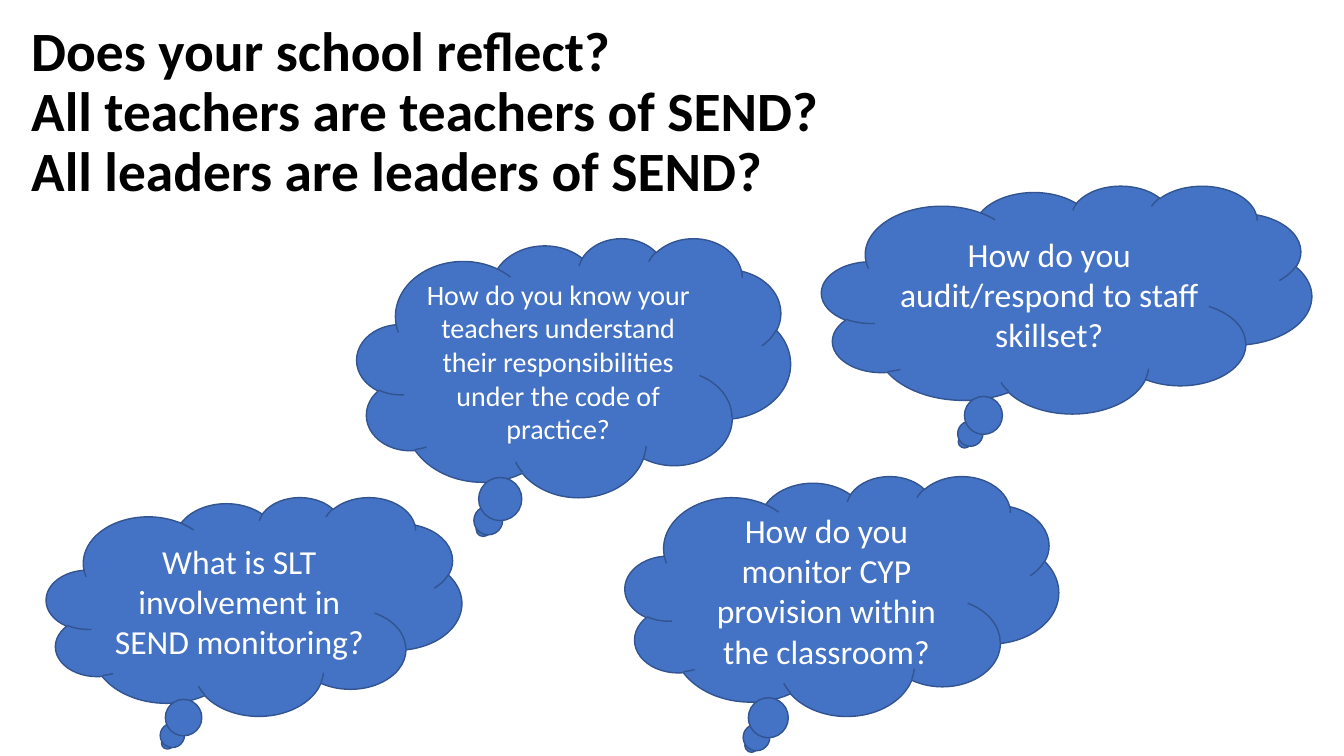
from dataclasses import dataclass

from pptx import Presentation
from pptx.dml.color import RGBColor
from pptx.enum.shapes import MSO_SHAPE
from pptx.enum.text import MSO_ANCHOR, MSO_AUTO_SIZE, PP_ALIGN
from pptx.slide import Slide
from pptx.text.text import TextFrame
from pptx.util import Inches, Pt

CLOUD = MSO_SHAPE.CLOUD_CALLOUT
MIDDLE = MSO_ANCHOR.MIDDLE
NO_FIT = MSO_AUTO_SIZE.NONE
LEFT = PP_ALIGN.LEFT
CENTER = PP_ALIGN.CENTER

BLACK = RGBColor(0x00, 0x00, 0x00)
WHITE = RGBColor(0xFF, 0xFF, 0xFF)
BLUE = RGBColor(0x44, 0x72, 0xC4)
NAVY = RGBColor(0x32, 0x54, 0x91)
FONT = "Calibri"
TITLE_ONLY = 5

TITLE = (
    "Does your school reflect?\n"
    "All teachers are teachers of SEND?\n"
    "All leaders are leaders of SEND?"
)


@dataclass(frozen=True)
class Cloud:
    text: str
    left: float
    top: float
    width: float
    height: float
    size: float = 24


CLOUDS = [
    Cloud(
        "How do you know your teachers understand their responsibilities "
        "under the code of practice?",
        3.54, 2.36, 4.3, 2.57, size=20,
    ),
    Cloud("How do you audit/respond to staff skillset?", 8.15, 1.84, 4.86, 2.26),
    Cloud(
        "How do you monitor CYP provision within the classroom?",
        6.2, 4.72, 4.3, 2.38,
    ),
    Cloud("What is SLT involvement in SEND monitoring?", 0.46, 4.93, 4.12, 2.17),
]


def write(
    frame: TextFrame,
    text: str,
    *,
    size: float,
    color: RGBColor,
    align: PP_ALIGN,
    bold: bool = False,
    spacing: float = 1.0,
) -> None:
    frame.word_wrap = True
    frame.auto_size = NO_FIT
    frame.vertical_anchor = MIDDLE
    para = frame.paragraphs[0]
    para.text = text
    para.alignment = align
    para.line_spacing = spacing
    para.space_before = Pt(0)
    for run in para.runs:
        run.font.name = FONT
        run.font.size = Pt(size)
        run.font.bold = bold
        run.font.color.rgb = color


def add_title(slide: Slide) -> None:
    title = slide.shapes.title
    title.left, title.top = Inches(0.21), Inches(0.4)
    title.width, title.height = Inches(12.2), Inches(1.45)
    write(
        title.text_frame, TITLE,
        size=39.6, color=BLACK, align=LEFT, bold=True, spacing=0.9,
    )


def add_cloud(slide: Slide, cloud: Cloud) -> None:
    shape = slide.shapes.add_shape(
        CLOUD,
        Inches(cloud.left), Inches(cloud.top),
        Inches(cloud.width), Inches(cloud.height),
    )
    shape.shadow.inherit = False
    shape.fill.solid()
    shape.fill.fore_color.rgb = BLUE
    shape.line.color.rgb = NAVY
    shape.line.width = Pt(1)
    write(
        shape.text_frame, cloud.text,
        size=cloud.size, color=WHITE, align=CENTER,
    )


def main() -> None:
    deck = Presentation()
    deck.slide_width, deck.slide_height = Inches(13.33), Inches(7.5)
    slide = deck.slides.add_slide(deck.slide_layouts[TITLE_ONLY])
    add_title(slide)
    for cloud in CLOUDS:
        add_cloud(slide, cloud)
    deck.save("out.pptx")


if __name__ == "__main__":
    main()
